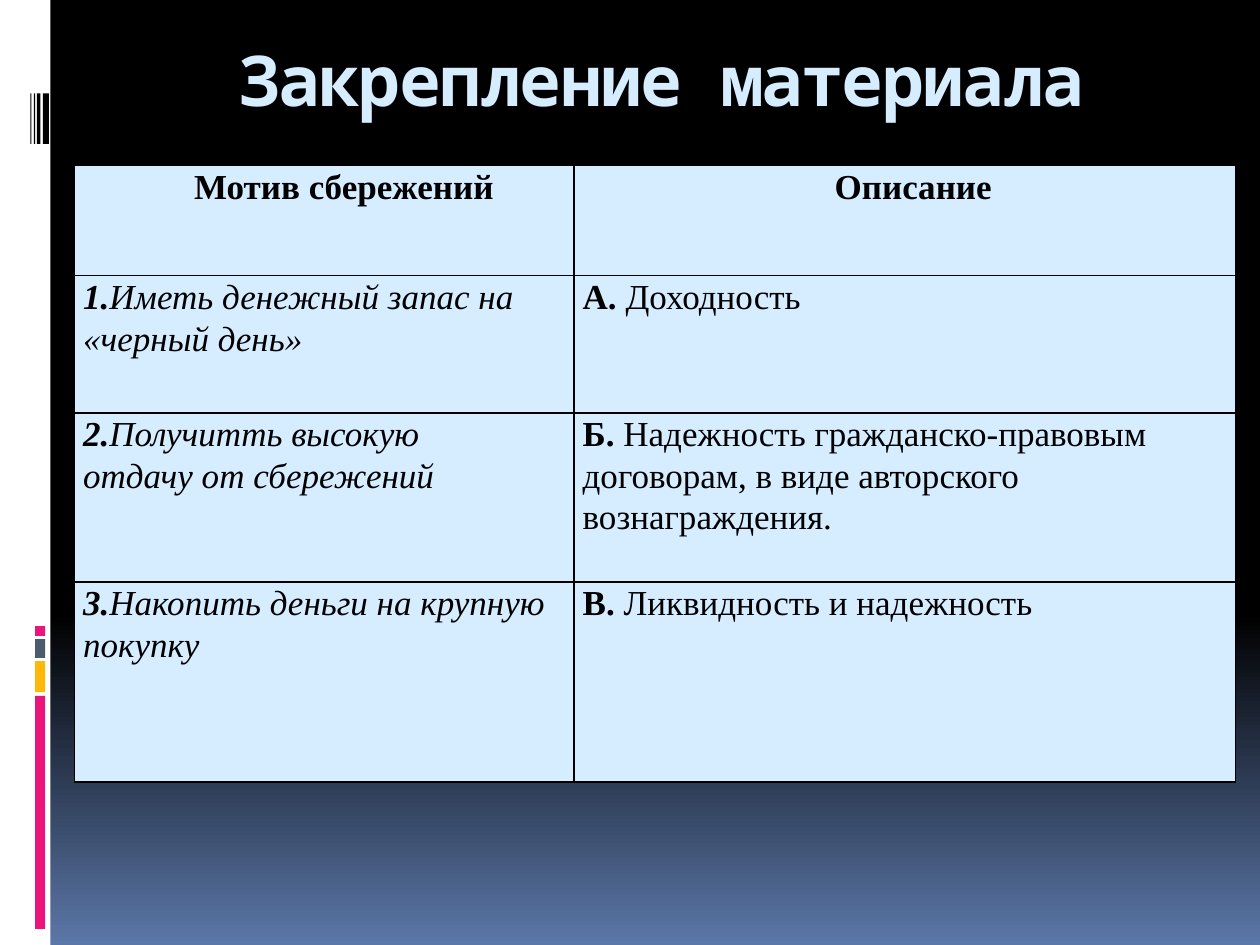
from lxml import etree
from pptx import Presentation
from pptx import util as u
from pptx.dml import color
from pptx.enum import text
from pptx.oxml import ns

BLACK, WHITE, PALE = "000000", "FFFFFF", "D6ECFF"
PINK, GOLD, SLATE, BLUE = "EA157A", "FEB80A", "4E5B6F", "5B77A8"
ALIGN = text.PP_ALIGN


def rgb(code):
    return color.RGBColor.from_string(code)


def write(par, words, font="Times New Roman", size=20, ink=BLACK,
          bold=False, slant=False, space=0):
    run = par.add_run()
    run.text = words
    face = run.font
    face.name, face.size = font, u.Pt(size)
    face.bold, face.italic = bold, slant
    face.color.rgb = rgb(ink)
    if space:
        run._r.get_or_add_rPr().set("spc", str(int(space * 100)))


def inset(par, left, right=0):
    props = par._p.get_or_add_pPr()
    props.set("marL", str(u.Pt(left)))
    props.set("marR", str(u.Pt(right)))
    props.set("indent", "0")


class Deck:
    def __init__(self):
        self.file = Presentation()
        self.file.slide_width, self.file.slide_height = u.Pt(720), u.Pt(540)
        self.slide = self.file.slides.add_slide(self.file.slide_layouts[5])

    def back(self, *stops):
        fill = self.slide.background.fill
        fill.gradient()
        fill.gradient_angle = 270
        for stop, (place, code) in zip(fill.gradient_stops, stops):
            stop.position = place
            stop.color.rgb = rgb(code)

    def bar(self, x, y, wide, high, code):
        box = self.slide.shapes.add_shape(1, *map(u.Pt, (x, y, wide, high)))
        box.shadow.inherit = False
        box.fill.solid()
        box.fill.fore_color.rgb = rgb(code)
        box.line.fill.background()

    def title(self, words, x, y, wide, high):
        box = self.slide.shapes.title
        box.left, box.top, box.width, box.height = map(
            u.Pt, (x, y, wide, high))
        frame = box.text_frame
        frame.auto_size = text.MSO_AUTO_SIZE.NONE
        frame.vertical_anchor = text.MSO_ANCHOR.TOP
        frame.margin_top = frame.margin_bottom = 0
        par = frame.paragraphs[0]
        par.alignment = ALIGN.CENTER
        write(par, words, font="Noto Sans Mono", size=40, ink=PALE,
              bold=True, space=-1)

    def grid(self, x, y, cols, rows):
        """Add an empty table with the given column widths and row heights."""
        table = self.slide.shapes.add_table(
            len(rows), len(cols), u.Pt(x), u.Pt(y),
            u.Pt(sum(cols)), u.Pt(sum(rows))).table
        for col, wide in zip(table.columns, cols):
            col.width = u.Pt(wide)
        for row, high in zip(table.rows, rows):
            row.height = u.Pt(high)
        for cell in table.iter_cells():
            self.cell(cell)
        return table

    def cell(self, cell):
        cell.margin_left = cell.margin_right = 0
        cell.margin_top = cell.margin_bottom = 0
        props = cell._tc.get_or_add_tcPr()
        for side in ("a:lnL", "a:lnR", "a:lnT", "a:lnB"):
            line = etree.SubElement(props, ns.qn(side), w=str(u.Pt(1)))
            fill = etree.SubElement(line, ns.qn("a:solidFill"))
            etree.SubElement(fill, ns.qn("a:srgbClr"), val=BLACK)
        cell.fill.solid()
        cell.fill.fore_color.rgb = rgb(PALE)
        par = cell.text_frame.paragraphs[0]
        par.line_spacing = 1.07
        par.space_before = u.Pt(0.2)


def main():
    deck = Deck()
    deck.back((0.65, BLACK), (1, BLUE))

    deck.bar(0, 0, 28.8, 540, WHITE)
    for y, high, code in ((397.6, 133.2, PINK), (377.8, 17.8, GOLD),
                          (365.2, 10.8, SLATE), (357.8, 5.6, PINK)):
        deck.bar(20, y, 5.8, high, code)
    for x, wide in ((24.5, 3.5), (21.1, 2), (19.4, 0.7), (17.3, 0.7)):
        deck.bar(x, 53.4, wide, 28.8, BLACK)

    deck.title("Закрепление материала", 36, 21, 684, 66)

    table = deck.grid(42.5, 94.5, (285.5, 378), (63, 78.5, 96.5, 114.5))
    heads = (("Мотив сбережений", ALIGN.CENTER, 22.5),
             ("Описание", ALIGN.JUSTIFY, 149))
    for col, (words, align, left) in enumerate(heads):
        par = table.cell(0, col).text_frame.paragraphs[0]
        par.alignment = align
        inset(par, left)
        write(par, words, bold=True)

    pairs = (
        ("Иметь денежный запас на «черный день»", "А. ", "Доходность"),
        ("Получитть высокую отдачу от сбережений", "Б. ",
         "Надежность гражданско-правовым договорам, "
         "в виде авторского вознаграждения."),
        ("Накопить деньги на крупную покупку", "В. ",
         "Ликвидность и надежность"),
    )
    for row, (motive, mark, answer) in enumerate(pairs, 1):
        sides = ((f"{row}.", motive, True), (mark, answer, False))
        for col, (label, words, slant) in enumerate(sides):
            par = table.cell(row, col).text_frame.paragraphs[0]
            inset(par, 5, 30 if row == 2 and col == 0 else 0)
            write(par, label, bold=True, slant=slant)
            write(par, words, slant=slant)

    deck.file.save("out.pptx")


if __name__ == "__main__":
    main()
